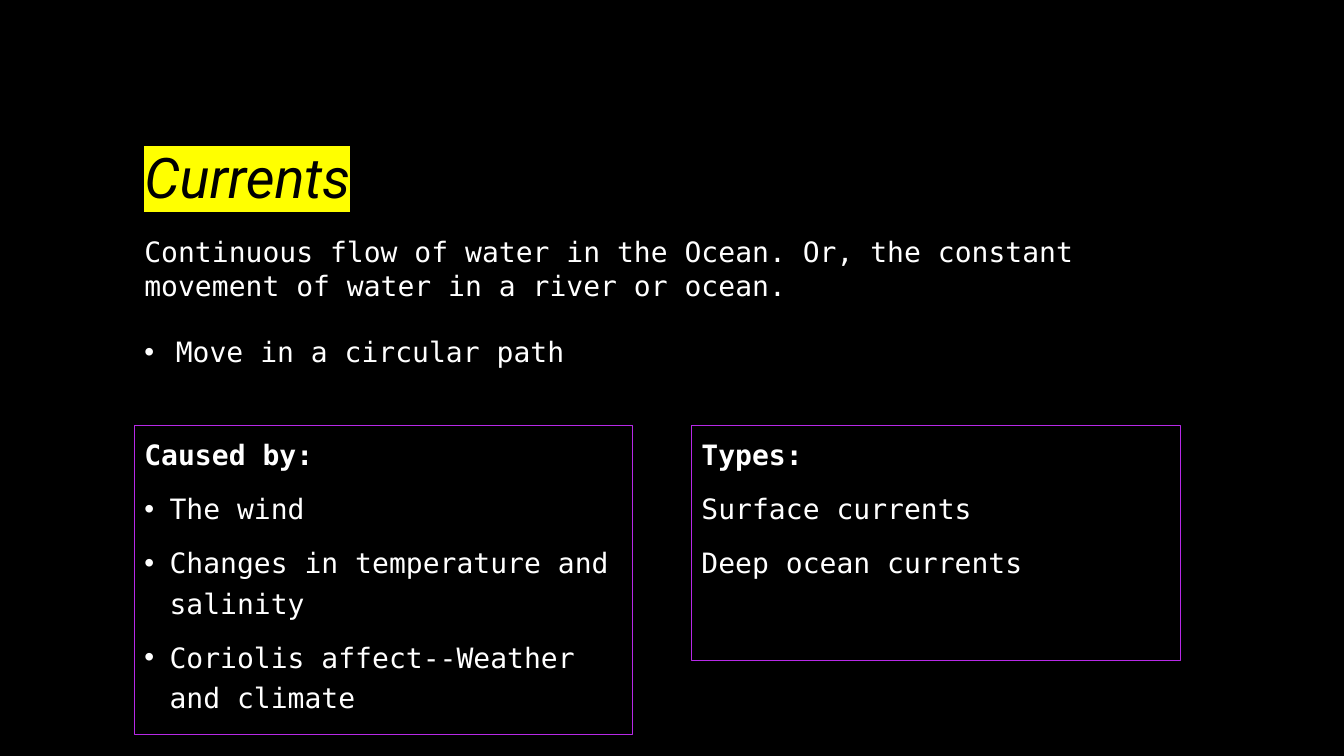
from lxml.etree import SubElement
from pptx import Presentation
from pptx.dml.color import RGBColor
from pptx.enum.shapes import MSO_SHAPE
from pptx.enum.text import MSO_ANCHOR, PP_ALIGN
from pptx.oxml.ns import qn
from pptx.util import Pt

COLORS = {"back": "000000", "text": "FFFFFF", "marker": "FFFF00", "border": "B629E7"}
TITLE_FONT = "Roboto"
BODY_FONT = "DejaVu Sans Mono"
BODY_SIZE = 20


def color(name):
    return RGBColor.from_string(COLORS[name])


def add_bullet(para, indent):
    properties = para._p.get_or_add_pPr()
    properties.set("marL", str(Pt(indent)))
    properties.set("indent", str(-Pt(indent)))
    SubElement(properties, qn("a:buFont"), typeface="Arial")
    SubElement(properties, qn("a:buChar"), char="•")


def write_para(frame, index, text, indent=0, bold=False, before=0, spacing=None):
    para = frame.add_paragraph() if index else frame.paragraphs[0]
    para.text = text
    para.alignment = PP_ALIGN.LEFT
    if spacing:
        para.line_spacing = spacing
    if index and before:
        para.space_before = Pt(before)
    if indent:
        add_bullet(para, indent)
    para.font.name = BODY_FONT
    para.font.size = Pt(BODY_SIZE)
    para.font.bold = bold
    para.font.color.rgb = color("text")


def add_title(page, box, text):
    frame = page.shapes.add_textbox(*map(Pt, box)).text_frame
    frame.word_wrap = True
    frame.vertical_anchor = MSO_ANCHOR.BOTTOM
    para = frame.paragraphs[0]
    para.line_spacing = 1.2
    span = para.add_run()
    span.text = text
    span.font.name = TITLE_FONT
    span.font.size = Pt(40)
    span.font.italic = True
    span.font.color.rgb = color("back")
    highlight = SubElement(span._r.rPr, qn("a:highlight"))
    SubElement(highlight, qn("a:srgbClr"), val=COLORS["marker"])
    span._r.rPr.find(qn("a:solidFill")).addnext(highlight)


def add_definition(page, box, definition, detail):
    frame = page.shapes.add_textbox(*map(Pt, box)).text_frame
    frame.word_wrap = True
    write_para(frame, 0, definition)
    write_para(frame, 1, detail, indent=22.5, before=23.5)


def add_panel(page, box, heading, items, indent=0):
    panel = page.shapes.add_shape(MSO_SHAPE.RECTANGLE, *map(Pt, box))
    panel.shadow.inherit = False
    panel.fill.background()
    panel.line.color.rgb = color("border")
    panel.line.width = Pt(0.75)
    frame = panel.text_frame
    frame.word_wrap = True
    frame.vertical_anchor = MSO_ANCHOR.TOP
    write_para(frame, 0, heading, bold=True, spacing=1.2)
    for index, item in enumerate(items, 1):
        write_para(frame, index, item, indent=indent, before=10, spacing=1.2)


def main():
    deck = Presentation()
    deck.slide_width, deck.slide_height = Pt(960), Pt(540)
    page = deck.slides.add_slide(deck.slide_layouts[6])
    page.background.fill.solid()
    page.background.fill.fore_color.rgb = color("back")

    left, panel_top = 96, 304
    add_title(page, (left, 28.8, 747.5, 124.5), "Currents")
    add_panel(
        page,
        (left, panel_top, 355.5, 220.5),
        "Caused by:",
        ["The wind", "Changes in temperature and salinity", "Coriolis affect--Weather and climate"],
        indent=18,
    )
    add_panel(
        page,
        (494, panel_top, 349.5, 167.5),
        "Types:",
        ["Surface currents", "Deep ocean currents"],
    )
    add_definition(
        page,
        (left, 164, 727, 104.5),
        "Continuous flow of water in the Ocean. Or, the constant movement of water in a river or ocean.",
        "Move in a circular path",
    )
    deck.save("out.pptx")


if __name__ == "__main__":
    main()
